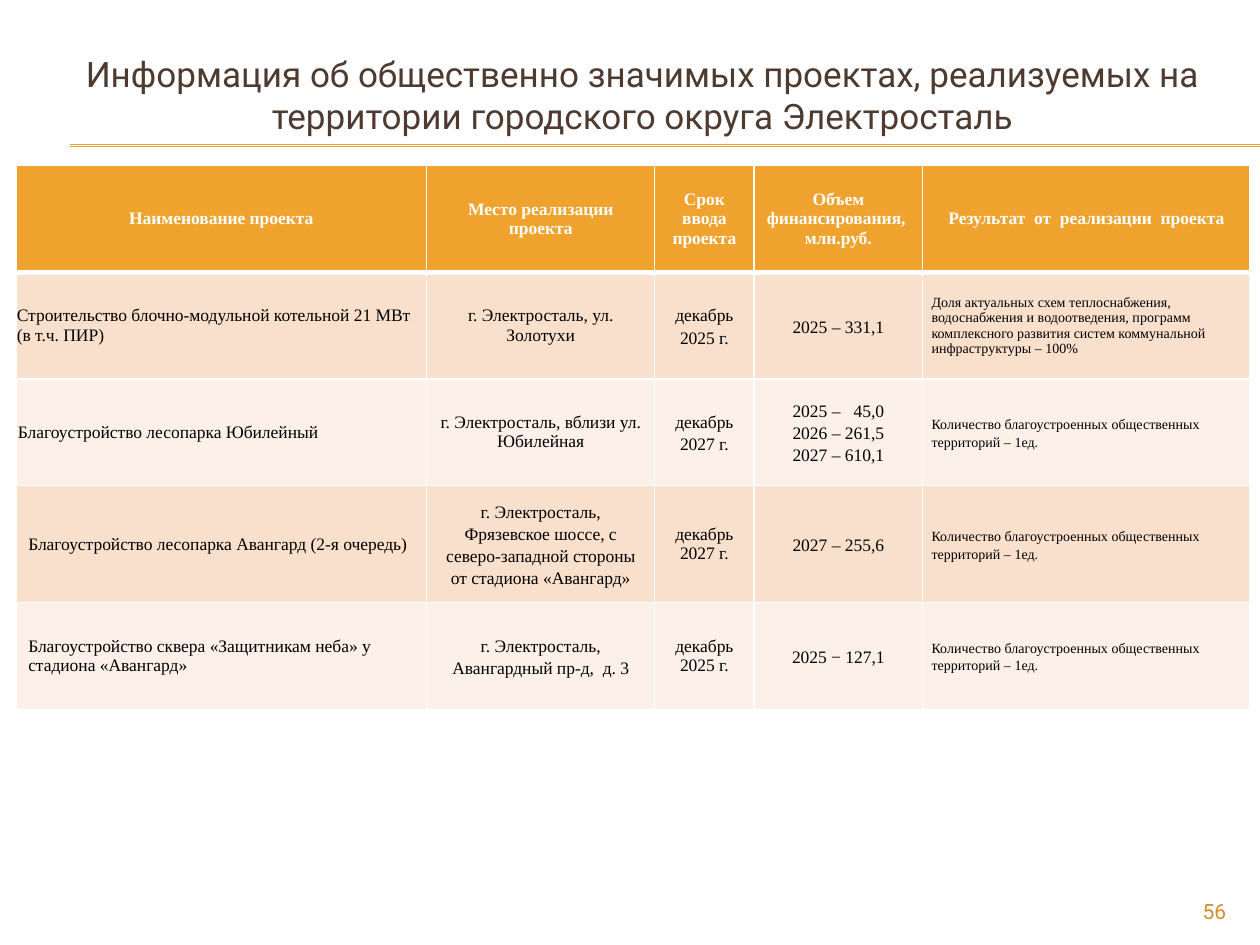
from lxml.etree import SubElement
from pptx import Presentation
from pptx.dml.color import RGBColor
from pptx.enum.shapes import MSO_CONNECTOR
from pptx.enum.text import MSO_ANCHOR, PP_ALIGN
from pptx.oxml import parse_xml
from pptx.oxml.ns import nsdecls, qn
from pptx.util import Cm, Pt

ACCENT, WHITE, BLACK = "F0A22E", "FFFFFF", "000000"
BANDS = ["F9E0CD", "FCF0E8"]
SERIF, SANS = "Times New Roman", "Roboto"
COLUMN_WIDTHS = [8.28, 4.6, 2, 3.4, 6.6]
ROW_HEIGHTS = [2.15, 2.15, 2.15, 2.36, 2.15]
HEADINGS = [
    "Наименование проекта",
    "Место реализации проекта",
    "Срок ввода проекта",
    "Объем финансирования, \nмлн.руб.",
    "Результат  от  реализации  проекта",
]
TERRITORIES = "Количество благоустроенных общественных территорий – 1ед."
PROJECTS = [
    ["Строительство блочно-модульной котельной 21 МВт (в т.ч. ПИР)",
     "г. Электросталь, ул. Золотухи", "декабрь 2025 г.", "2025 – 331,1",
     "Доля актуальных схем теплоснабжения, водоснабжения и водоотведения, "
     "программ комплексного развития систем коммунальной инфраструктуры – 100%"],
    ["Благоустройство лесопарка Юбилейный",
     "г. Электросталь, вблизи ул. Юбилейная", "декабрь 2027 г.",
     "2025 –   45,0\n2026 – 261,5\n2027 – 610,1", TERRITORIES],
    ["Благоустройство лесопарка Авангард (2-я очередь)",
     "г. Электросталь, Фрязевское шоссе, с северо-западной стороны от стадиона «Авангард»",
     "декабрь 2027 г.", "2027 – 255,6", TERRITORIES],
    ["Благоустройство сквера «Защитникам неба» у стадиона «Авангард»",
     "г. Электросталь, Авангардный пр-д,  д. 3", "декабрь 2025 г.",
     "2025 − 127,1", TERRITORIES],
]
SPACINGS = [
    [1, 1, 1.15, 1.15, 1],
    [1, 1, 1.15, 1.15, 1.15],
    [1, 1.15, 1, 1.15, 1.15],
    [1, 1.15, 1, 1.15, 1.15],
]
WIDE, NARROW = (0.25, 0.13), (0.18, 0)
MARGINS = [
    [(0.02, 0.01)] + [NARROW] * 4,
    [(0.04, 0)] + [NARROW] * 4,
    [WIDE] * 4 + [NARROW],
    [WIDE] * 4 + [NARROW],
]


def color(value):
    return RGBColor.from_string(value)


def apply(target, values):
    for name, value in values.items():
        setattr(target, name, value)


def write(frame, text, size, font, ink, align, bold=False, spacing=1):
    frame.text = text
    for paragraph in frame.paragraphs:
        apply(paragraph, {"alignment": align, "line_spacing": spacing})
        for run in paragraph.runs:
            apply(run.font, {"size": Pt(size), "name": font, "bold": bold})
            run.font.color.rgb = color(ink)


def add_text(slide, box, text, size, ink, align, anchor):
    frame = slide.shapes.add_textbox(*map(Cm, box)).text_frame
    apply(frame, {"word_wrap": True, "vertical_anchor": anchor})
    write(frame, text, size, SANS, ink, align)


def add_rule(slide, top):
    rule = slide.shapes.add_connector(
        MSO_CONNECTOR.STRAIGHT, Cm(1.42), Cm(top), Cm(25.4), Cm(top))
    rule.line.color.rgb = color(ACCENT)
    rule.line.width = Pt(0.75)
    SubElement(rule.element.spPr, qn("a:effectLst"))


def set_borders(cell, top, bottom):
    properties = cell._tc.get_or_add_tcPr()
    sides = {"L": 1, "R": 1, "T": top, "B": bottom}
    for position, (side, width) in enumerate(sides.items()):
        properties.insert(position, parse_xml(
            f'<a:ln{side} {nsdecls("a")} w="{Pt(width)}"><a:solidFill>'
            f'<a:srgbClr val="{WHITE}"/></a:solidFill></a:ln{side}>'))


def format_cell(cell, fill, margins, top=1, bottom=1):
    side, edge = map(Cm, margins)
    apply(cell, {"vertical_anchor": MSO_ANCHOR.MIDDLE,
                 "margin_left": side, "margin_right": side,
                 "margin_top": edge, "margin_bottom": edge})
    cell.fill.solid()
    cell.fill.fore_color.rgb = color(fill)
    set_borders(cell, top, bottom)


def add_projects(slide):
    table = slide.shapes.add_table(
        len(ROW_HEIGHTS), len(COLUMN_WIDTHS), Cm(0.32), Cm(3.34),
        Cm(sum(COLUMN_WIDTHS)), Cm(sum(ROW_HEIGHTS))).table
    for column, width in zip(table.columns, COLUMN_WIDTHS):
        column.width = Cm(width)
    for row, height in zip(table.rows, ROW_HEIGHTS):
        row.height = Cm(height)
    for column, heading in enumerate(HEADINGS):
        cell = table.cell(0, column)
        format_cell(cell, ACCENT, WIDE, bottom=3)
        write(cell.text_frame, heading, 10, SERIF, WHITE, PP_ALIGN.CENTER, bold=True)
    last = len(HEADINGS) - 1
    for index, project in enumerate(PROJECTS):
        for column, text in enumerate(project):
            cell = table.cell(index + 1, column)
            format_cell(cell, BANDS[index % 2], MARGINS[index][column],
                        top=1 if index else 3)
            align = PP_ALIGN.LEFT if column in (0, last) else PP_ALIGN.CENTER
            write(cell.text_frame, text, 8 if column == last else 10, SERIF,
                  BLACK, align, spacing=SPACINGS[index][column])


def main():
    presentation = Presentation()
    apply(presentation, {"slide_width": Cm(25.4), "slide_height": Cm(19.05)})
    slide = presentation.slides.add_slide(presentation.slide_layouts[6])
    for top in (2.92, 2.95):
        add_rule(slide, top)
    add_text(slide, (0.89, 0.74, 24.13, 2.34),
             "Информация об общественно значимых проектах, реализуемых на "
             "территории городского округа Электросталь",
             20, "4E3B30", PP_ALIGN.CENTER, MSO_ANCHOR.MIDDLE)
    add_projects(slide)
    add_text(slide, (22.86, 17.98, 2.11, 0.69), "56", 12, "D48F29",
             PP_ALIGN.RIGHT, MSO_ANCHOR.TOP)
    presentation.save("out.pptx")


if __name__ == "__main__":
    main()
